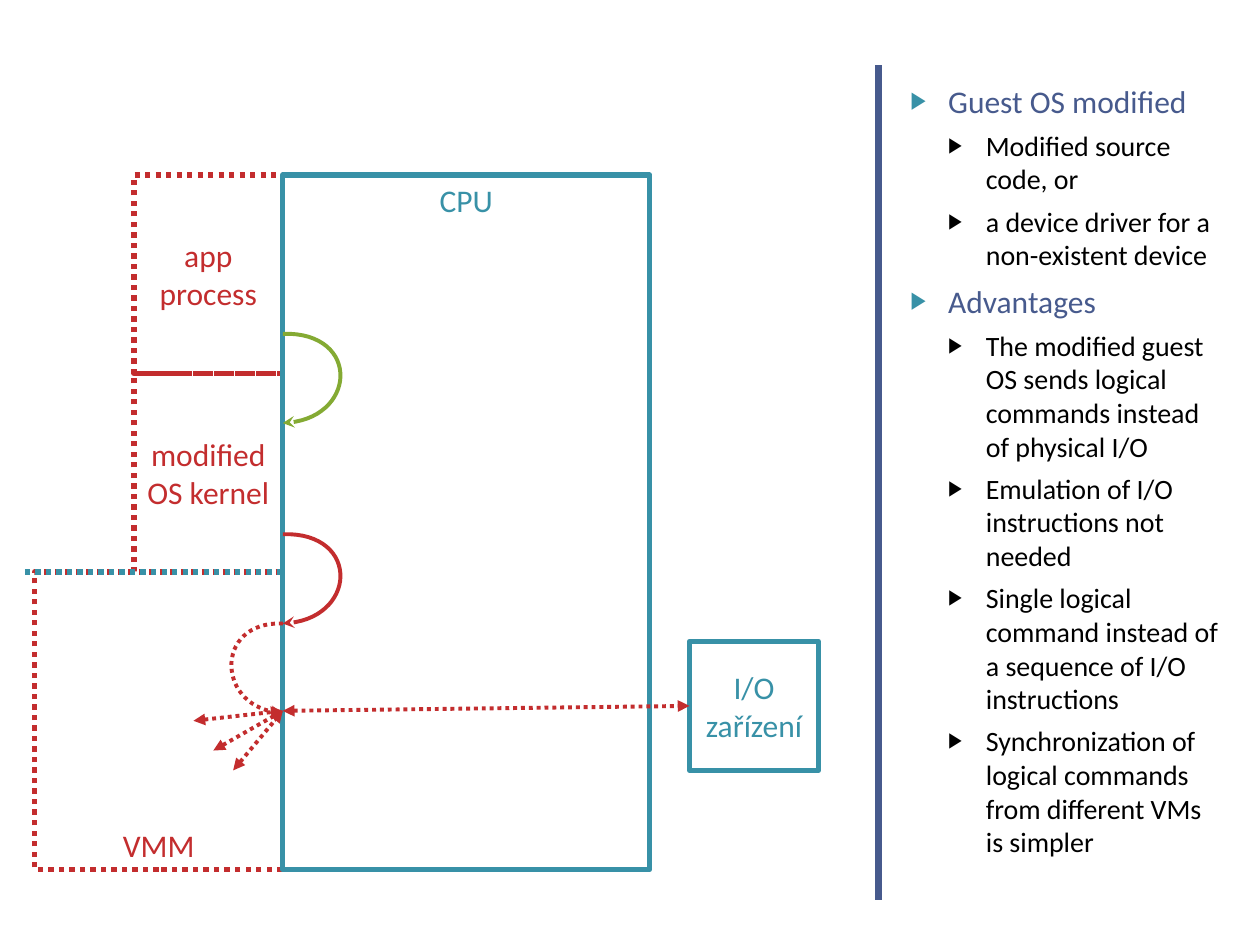
from dataclasses import dataclass

from lxml.etree import SubElement
from pptx import Presentation
from pptx.dml.color import RGBColor
from pptx.enum.dml import MSO_LINE
from pptx.enum.shapes import MSO_CONNECTOR, MSO_SHAPE
from pptx.enum.text import MSO_ANCHOR, MSO_AUTO_SIZE, PP_ALIGN
from pptx.oxml.ns import qn
from pptx.util import Cm, Pt


@dataclass(frozen=True)
class Theme:
    font: str = "Calibri"
    navy: str = "475A8D"
    teal: str = "3891A7"
    red: str = "C32D2E"
    green: str = "84AA33"
    black: str = "000000"
    large: float = 18
    small: float = 16
    box_line: float = 3
    arrow_line: float = 2.25
    divider_line: float = 4


THEME = Theme()

# Diagram grid, in centimetres
TOP = 3.53
ROW = 4
CPU_LEFT = 5.7
CPU_WIDTH = 7.4
GUEST_WIDTH = 3
VMM_WIDTH = 5
VMM_HEIGHT = 6
VMM_TOP = TOP + 2 * ROW
HUB = (CPU_LEFT, 14.33)
ARC = [(0, 0), (1.6, -0.05), (1.5, 1.75), (0, 1.8)]
ARC_STEPS = 32

OUTLINE = [
    ("Guest OS modified", [
        "Modified source code, or",
        "a device driver for a non-existent device",
    ]),
    ("Advantages", [
        "The modified guest OS sends logical commands instead of physical I/O",
        "Emulation of I/O instructions not needed",
        "Single logical command instead of a sequence of I/O instructions",
        "Synchronization of logical commands from different VMs is simpler",
    ]),
]


def add_run(paragraph, text, size, color):
    run = paragraph.add_run()
    run.text = text
    run.font.name = THEME.font
    run.font.size = Pt(size)
    run.font.color.rgb = RGBColor.from_string(color)


def style_line(line, color, width, dotted=False):
    line.color.rgb = RGBColor.from_string(color)
    line.width = Pt(width)
    if dotted:
        line.dash_style = MSO_LINE.ROUND_DOT


def add_arrowheads(shape, kind, *ends):
    outline = shape.element.spPr.find(qn("a:ln"))
    for end in ends:
        SubElement(outline, qn(f"a:{end}"), type=kind)


def add_box(slide, text, left, top, width, height, color,
            anchor=MSO_ANCHOR.MIDDLE, dotted=False):
    shape = slide.shapes.add_shape(
        MSO_SHAPE.RECTANGLE, Cm(left), Cm(top), Cm(width), Cm(height))
    shape.shadow.inherit = False
    shape.fill.background()
    style_line(shape.line, color, THEME.box_line, dotted)
    frame = shape.text_frame
    frame.word_wrap = True
    frame.vertical_anchor = anchor
    paragraph = frame.paragraphs[0]
    paragraph.alignment = PP_ALIGN.CENTER
    add_run(paragraph, text, THEME.large, color)


def add_line(slide, start, end, color, width, dotted=False):
    line = slide.shapes.add_connector(
        MSO_CONNECTOR.STRAIGHT, *(Cm(value) for value in (*start, *end)))
    style_line(line.line, color, width, dotted)
    SubElement(line.element.spPr, qn("a:effectLst"))
    return line


def add_double_arrow(slide, start, end):
    arrow = add_line(slide, start, end, THEME.red, THEME.arrow_line, True)
    add_arrowheads(arrow, "triangle", "headEnd", "tailEnd")


def arc_point(t):
    """Point at t (0 to 1) on the cubic curve through ARC's control points."""
    weights = ((1 - t) ** 3, 3 * t * (1 - t) ** 2, 3 * t ** 2 * (1 - t), t ** 3)
    return tuple(sum(weight * point[axis] for weight, point in zip(weights, ARC))
                 for axis in (0, 1))


def add_arc_arrow(slide, top, color, stretch=1, dotted=False):
    """Curve that leaves the CPU edge and returns; a negative stretch goes left."""
    arc = [arc_point(step / ARC_STEPS) for step in range(ARC_STEPS + 1)]
    points = [(Cm(CPU_LEFT + stretch * x), Cm(top + y)) for x, y in arc]
    builder = slide.shapes.build_freeform(*points[0])
    builder.add_line_segments(points[1:], close=False)
    shape = builder.convert_to_shape()
    shape.shadow.inherit = False
    shape.fill.background()
    style_line(shape.line, color, THEME.arrow_line, dotted)
    add_arrowheads(shape, "stealth", "tailEnd")


def set_bullet(paragraph, color):
    properties = paragraph._p.get_or_add_pPr()
    properties.set("marL", str(Cm(0.76 * (paragraph.level + 1))))
    properties.set("indent", str(Cm(-0.76)))
    bullet_color = SubElement(properties, qn("a:buClr"))
    SubElement(bullet_color, qn("a:srgbClr"), val=color)
    SubElement(properties, qn("a:buSzPct"), val="76000")
    SubElement(properties, qn("a:buChar"), char="▶")


def fill_outline(body):
    body.left, body.top = Cm(18.1), Cm(1.52)
    body.width, body.height = Cm(6.8), Cm(16.4)
    frame = body.text_frame
    frame.word_wrap = True
    frame.auto_size = MSO_AUTO_SIZE.NONE
    frame.vertical_anchor = MSO_ANCHOR.TOP
    items = []
    for heading, details in OUTLINE:
        items.append((heading, 0, THEME.large, THEME.navy, THEME.teal, 6))
        items += [(detail, 1, THEME.small, THEME.black, THEME.black, 5)
                  for detail in details]
    for index, (text, level, size, color, bullet, space) in enumerate(items):
        paragraph = frame.add_paragraph() if index else frame.paragraphs[0]
        paragraph.level = level
        paragraph.space_before = Pt(space)
        set_bullet(paragraph, bullet)
        add_run(paragraph, text, size, color)


def draw_machine(slide):
    guest_left = CPU_LEFT - GUEST_WIDTH
    for row, text in enumerate(["app process", "modified OS kernel"]):
        add_box(slide, text, guest_left, TOP + row * ROW, GUEST_WIDTH, ROW,
                THEME.red, dotted=True)
    add_box(slide, "VMM", CPU_LEFT - VMM_WIDTH, VMM_TOP, VMM_WIDTH, VMM_HEIGHT,
            THEME.red, MSO_ANCHOR.BOTTOM, dotted=True)
    add_box(slide, "CPU", CPU_LEFT, TOP, CPU_WIDTH, 2 * ROW + VMM_HEIGHT,
            THEME.teal, MSO_ANCHOR.TOP)
    add_line(slide, (0.5, VMM_TOP), (CPU_LEFT, VMM_TOP), THEME.teal,
             THEME.box_line, dotted=True)
    add_box(slide, "I/O zařízení", 13.9, 12.93, 2.6, 2.6, THEME.teal)


def draw_control_flow(slide):
    add_double_arrow(slide, HUB, (13.9, 14.23))
    for target in [(3.9, 14.53), (4.3, 15.13), (4.7, 15.53)]:
        add_double_arrow(slide, target, HUB)
    add_arc_arrow(slide, 6.73, THEME.green)
    add_arc_arrow(slide, 10.77, THEME.red)
    add_arc_arrow(slide, 12.57, THEME.red, stretch=-0.89, dotted=True)


def main():
    presentation = Presentation()
    presentation.slide_width, presentation.slide_height = Cm(25.4), Cm(19.05)
    slide = presentation.slides.add_slide(presentation.slide_layouts[1])
    title = slide.shapes.title.element
    title.getparent().remove(title)
    add_line(slide, (17.7, 1.32), (17.7, 18.14), THEME.navy, THEME.divider_line)
    fill_outline(slide.placeholders[1])
    draw_machine(slide)
    draw_control_flow(slide)
    presentation.save("out.pptx")


if __name__ == "__main__":
    main()
